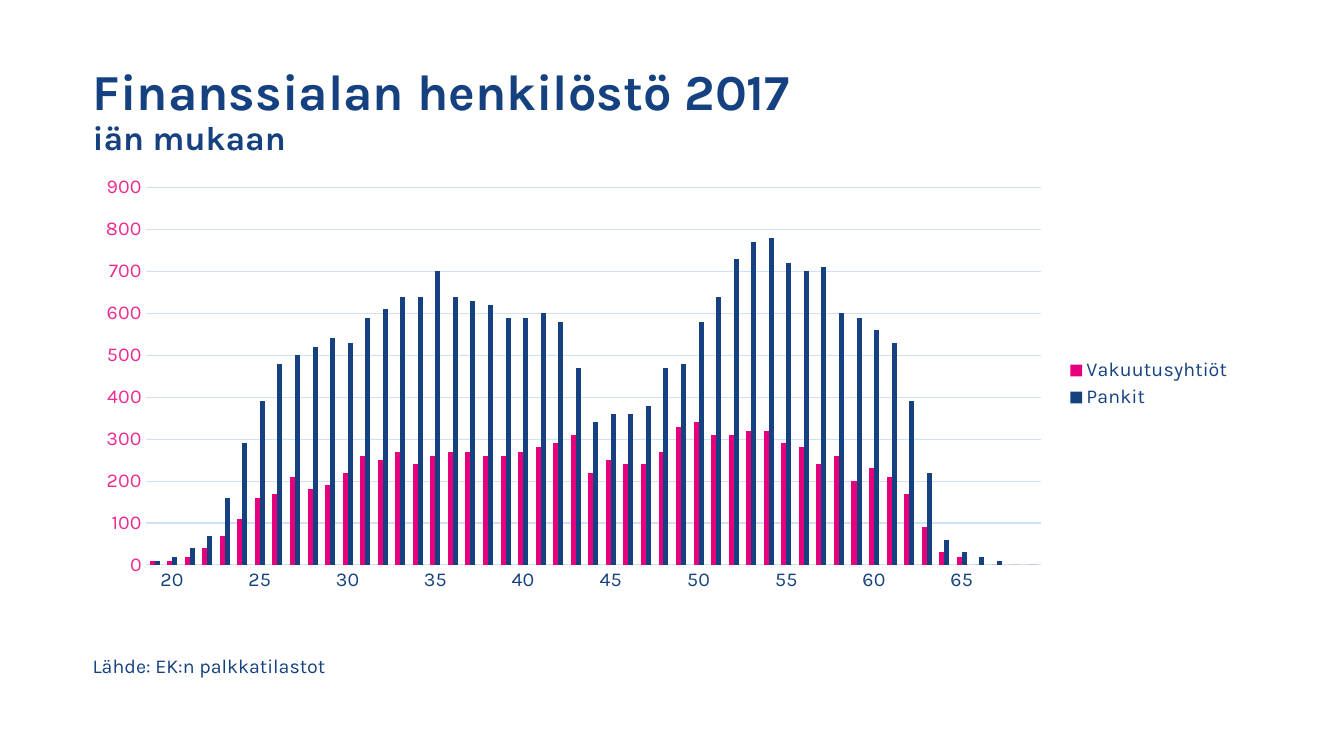
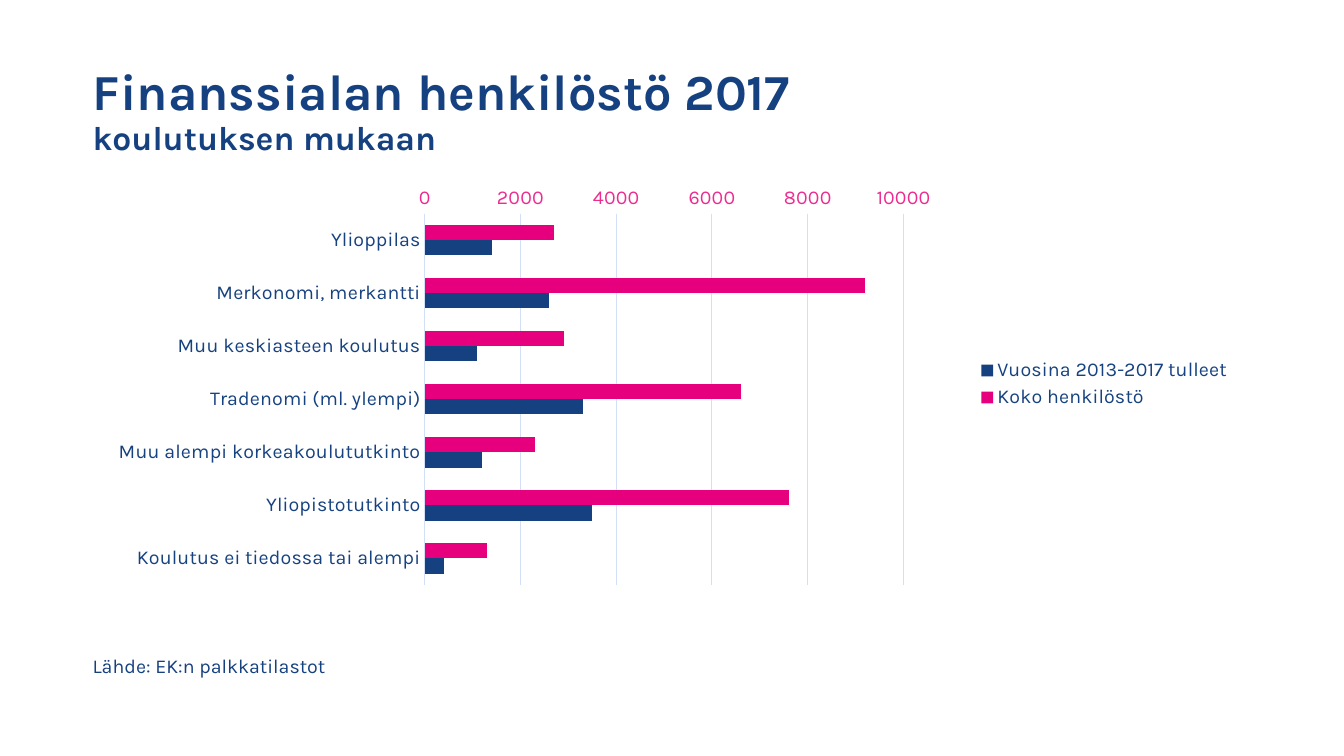
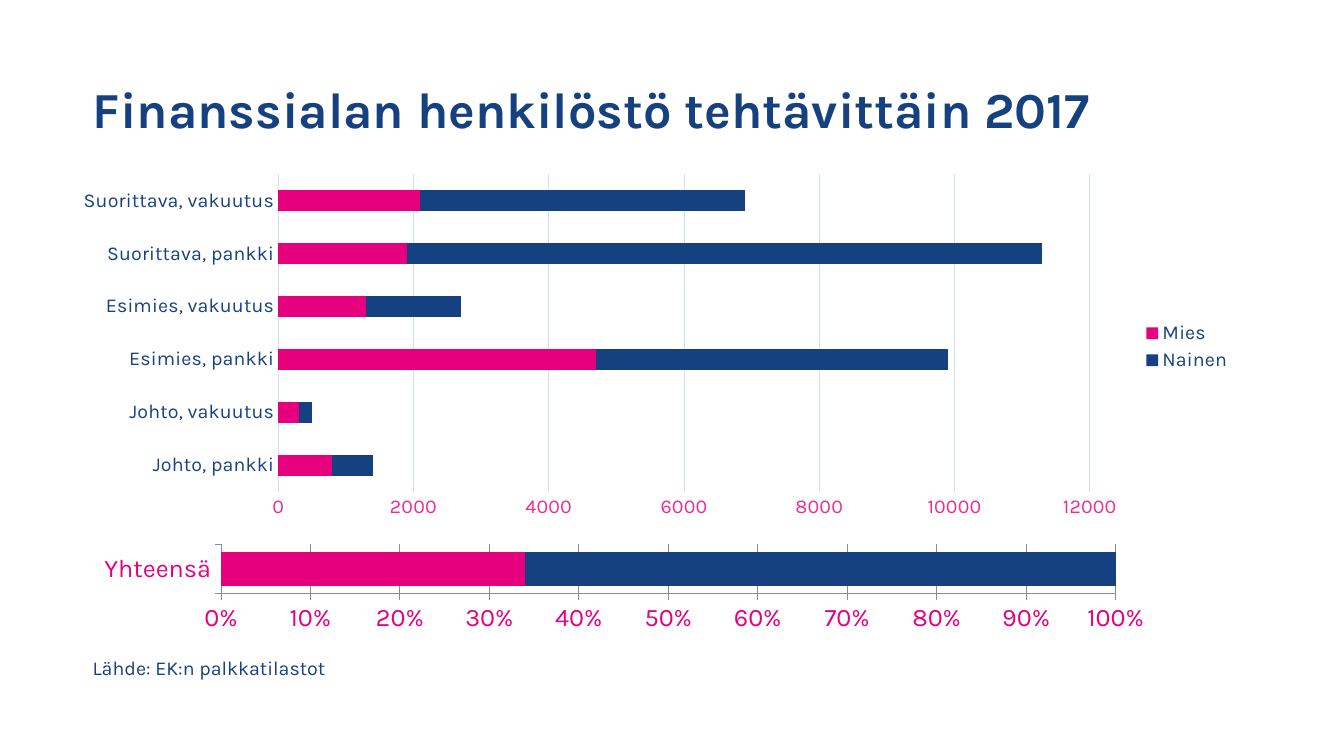
from lxml import etree
from pptx import Presentation
from pptx.chart.data import CategoryChartData
from pptx.dml.color import RGBColor
from pptx.enum.chart import XL_CHART_TYPE, XL_LEGEND_POSITION, XL_TICK_MARK
from pptx.enum.text import MSO_ANCHOR, MSO_AUTO_SIZE
from pptx.oxml.ns import qn
from pptx.util import Emu, Pt

COLUMNS = XL_CHART_TYPE.COLUMN_CLUSTERED
BARS = XL_CHART_TYPE.BAR_CLUSTERED
STACKED = XL_CHART_TYPE.BAR_STACKED
STACKED_100 = XL_CHART_TYPE.BAR_STACKED_100
RIGHT = XL_LEGEND_POSITION.RIGHT
NO_TICK, TICK_OUT = XL_TICK_MARK.NONE, XL_TICK_MARK.OUTSIDE
MIDDLE = MSO_ANCHOR.MIDDLE
FIT_SHAPE = MSO_AUTO_SIZE.SHAPE_TO_FIT_TEXT

EMU_PER_PX = 9144  # 100 px to the inch
FONT = "Karla"
NAVY, CHART_TEXT = "164180", "164280"
PINK, AXIS_PINK = "E6007E", "EE2C90"
GRID, AXIS_GRAY = "D1E0F7", "868BA3"
LEFT, WIDTH = 82, 1150
CHART_TOP, CHART_HEIGHT = 166, 430


def px(n):
    return Emu(n * EMU_PER_PX)


def rgb(color):
    return RGBColor.from_string(color)


def set_font(font, size, color, bold=False):
    font.name, font.size, font.bold = FONT, Pt(size), bold
    font.color.rgb = rgb(color)


def set_line(line, color):
    line.color.rgb = rgb(color)
    line.width = Pt(0.75)


def set_inner_plot(chart, box):
    """Fix the plot area, without labels, to x, y, w, h as shares of the chart."""
    area = chart._chartSpace.find(".//" + qn("c:plotArea"))
    for old in area.findall(qn("c:layout")):
        area.remove(old)
    layout = etree.Element(qn("c:layout"))
    manual = etree.SubElement(layout, qn("c:manualLayout"))
    settings = [("layoutTarget", "inner"), ("xMode", "edge"), ("yMode", "edge")]
    for tag, value in settings + list(zip("xywh", box)):
        etree.SubElement(manual, qn("c:" + tag)).set("val", str(value))
    area.insert(0, layout)


class Deck:
    def __init__(self):
        self.prs = Presentation()
        self.prs.slide_width, self.prs.slide_height = px(1333), px(750)
        self.s = None

    def slide(self, title, subtitle=None, source_top=644):
        self.s = self.prs.slides.add_slide(self.prs.slide_layouts[6])
        self.title(title, subtitle)
        self.source(source_top)

    def title(self, title, subtitle):
        tf = self.s.shapes.add_textbox(px(LEFT), px(39), px(WIDTH), px(145)).text_frame
        tf.word_wrap = True
        tf.vertical_anchor = MIDDLE
        p = tf.paragraphs[0]
        p.text = f"{title}\v{subtitle}" if subtitle else title
        p.line_spacing = 0.9
        for r, size in zip(p.runs, (36, 24)):
            set_font(r.font, size, NAVY, bold=True)

    def source(self, top):
        tf = self.s.shapes.add_textbox(px(LEFT), px(top), px(267), px(34)).text_frame
        tf.word_wrap = False
        tf.auto_size = FIT_SHAPE
        tf.text = "Lähde: EK:n palkkatilastot"
        set_font(tf.paragraphs[0].runs[0].font, 14, NAVY)

    def add_chart(self, kind, box, categories, series, gap):
        """series: (name, values, colour) tuples."""
        data = CategoryChartData()
        data.categories = categories
        for name, values, _ in series:
            data.add_series(name, values)
        chart = self.s.shapes.add_chart(kind, *map(px, box), data).chart
        chart.has_title = False
        chart.has_legend = False
        plot = chart.plots[0]
        plot.vary_by_categories = False
        plot.gap_width = gap
        plot.overlap = 100 if kind in (STACKED, STACKED_100) else 0
        for ser, (_, _, color) in zip(plot.series, series):
            ser.format.fill.solid()
            ser.format.fill.fore_color.rgb = rgb(color)
            ser.invert_if_negative = False
        return chart

    def staff_chart(self, kind, categories, series, height=CHART_HEIGHT):
        chart = self.add_chart(kind, (LEFT, CHART_TOP, WIDTH, height), categories, series, 150)
        set_font(chart.font, 14, CHART_TEXT)
        chart.has_legend = True
        chart.legend.position = RIGHT
        chart.legend.include_in_layout = False
        set_font(chart.legend.font, 14, CHART_TEXT)
        cat, val = chart.category_axis, chart.value_axis
        for axis, color in ((cat, CHART_TEXT), (val, AXIS_PINK)):
            axis.major_tick_mark = axis.minor_tick_mark = NO_TICK
            set_font(axis.tick_labels.font, 14, color)
            body = axis._element.find(qn("c:txPr")).find(qn("a:bodyPr"))
            body.set("rot", "-60000000")
        cat.has_major_gridlines = False
        set_line(cat.format.line, GRID)
        val.format.line.fill.background()
        set_line(val.major_gridlines.format.line, GRID)
        return chart

    def total_chart(self, category, series):
        chart = self.add_chart(STACKED_100, (LEFT, 538, 1074, 92), [category], series, 50)
        set_font(chart.font, 18, PINK)
        for axis in (chart.category_axis, chart.value_axis):
            axis.major_tick_mark, axis.minor_tick_mark = TICK_OUT, NO_TICK
            set_line(axis.format.line, AXIS_GRAY)
        val = chart.value_axis
        val.major_unit = 0.1
        val.tick_labels.number_format = "0%"
        val.tick_labels.number_format_is_linked = False
        set_line(val.major_gridlines.format.line, AXIS_GRAY)


def main():
    deck = Deck()

    deck.slide("Finanssialan henkilöstö 2017", "iän mukaan")
    ages = [str(age) if age % 5 == 0 else "" for age in range(19, 70)]
    insurers = [
        10, 10, 20, 40, 70, 110, 160, 170, 210, 180, 190, 220, 260, 250, 270, 240, 260,
        270, 270, 260, 260, 270, 280, 290, 310, 220, 250, 240, 240, 270, 330, 340, 310, 310,
        320, 320, 290, 280, 240, 260, 200, 230, 210, 170, 90, 30, 20, 0, 0, 0, 0]
    banks = [
        10, 20, 40, 70, 160, 290, 390, 480, 500, 520, 540, 530, 590, 610, 640, 640, 700,
        640, 630, 620, 590, 590, 600, 580, 470, 340, 360, 360, 380, 470, 480, 580, 640, 730,
        770, 780, 720, 700, 710, 600, 590, 560, 530, 390, 220, 60, 30, 20, 10, 0, 0]
    deck.staff_chart(COLUMNS, ages, [("Vakuutusyhtiöt", insurers, PINK), ("Pankit", banks, NAVY)])

    deck.slide("Finanssialan henkilöstö 2017", "koulutuksen mukaan")
    education = [
        "Ylioppilas", "Merkonomi, merkantti", "Muu keskiasteen koulutus",
        "Tradenomi (ml. ylempi)", "Muu alempi korkeakoulututkinto",
        "Yliopistotutkinto", "Koulutus ei tiedossa tai alempi"]
    chart = deck.staff_chart(BARS, education, [
        ("Koko henkilöstö", [2700, 9200, 2900, 6600, 2300, 7600, 1300], PINK),
        ("Vuosina 2013-2017 tulleet", [1400, 2600, 1100, 3300, 1200, 3500, 400], NAVY)])
    chart.category_axis.reverse_order = True
    chart.value_axis.major_unit = 2000
    set_inner_plot(chart, (0.295, 0.107, 0.413, 0.857))

    deck.slide("Finanssialan henkilöstö tehtävittäin 2017", source_top=646)
    roles = [f"{role}, {field}" for role in ("Johto", "Esimies", "Suorittava")
             for field in ("pankki", "vakuutus")]
    deck.staff_chart(STACKED, roles, [
        ("Mies", [800, 300, 4700, 1300, 1900, 2100], PINK),
        ("Nainen", [600, 200, 5200, 1400, 9400, 4800], NAVY)], height=356)
    deck.total_chart("Yhteensä", [("Mies", [34], PINK), ("Nainen", [66], NAVY)])

    deck.prs.save("out.pptx")


if __name__ == "__main__":
    main()
